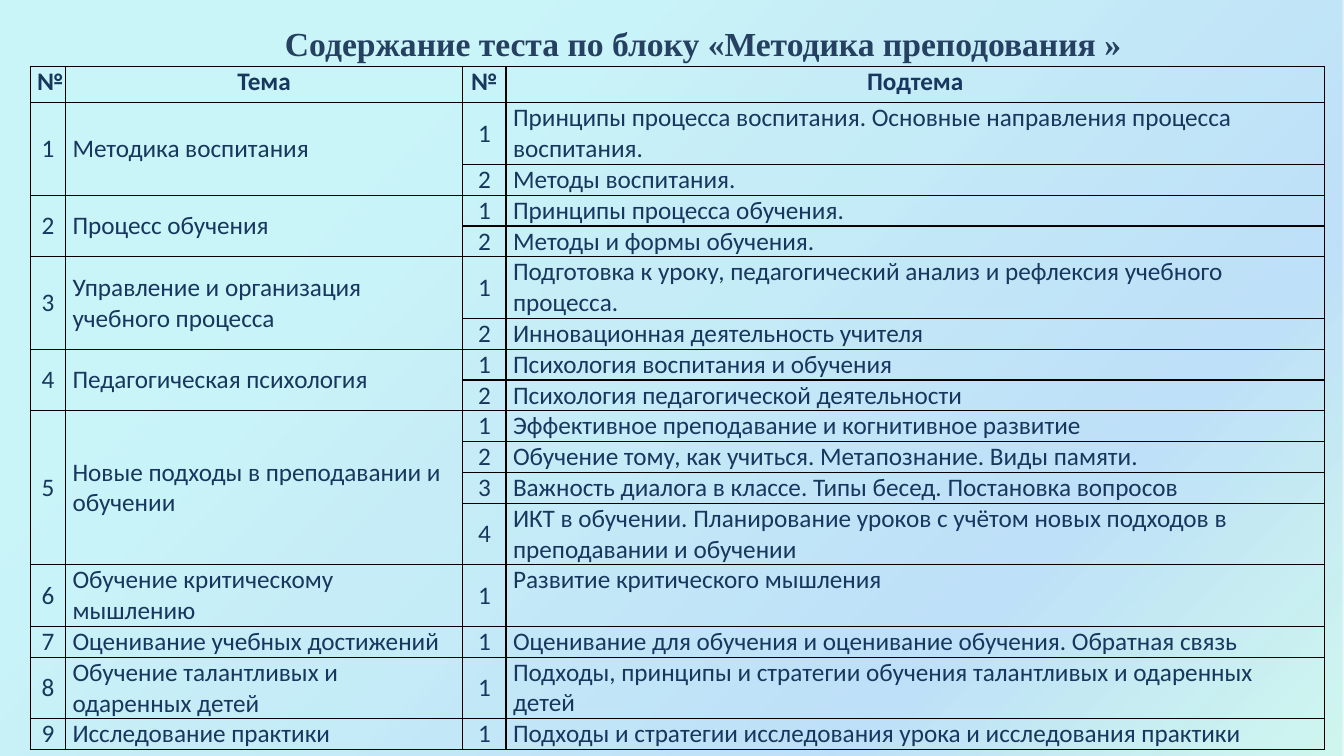
from dataclasses import dataclass

from pptx import Presentation
from pptx import oxml
from pptx.dml.color import RGBColor
from pptx.enum import shapes, text
from pptx.oxml import ns
from pptx.util import Pt


@dataclass(frozen=True)
class Theme:
    """Colours, fonts and sizes of the slide."""
    head: str = "254061"
    ink: str = "17375E"
    rule: str = "000000"
    wash: tuple = ((25, "21D6E0", 23), (75, "0087E6", 25),
                   (100, "03D4A8", 18), (100, "005CBF", 26))
    serif: str = "Times New Roman"
    sans: str = "Calibri"
    big: int = 24
    body: int = 18


LOOK = Theme()
TITLE = "Содержание теста по блоку «Методика преподования »"
HEADS = ("№", "Тема", "№", "Подтема")
TOPICS = (
    ("Методика воспитания", (
        "Принципы процесса воспитания. Основные направления процесса воспитания.",
        "Методы воспитания.")),
    ("Процесс обучения", (
        "Принципы процесса обучения.",
        "Методы и формы обучения.")),
    ("Управление и организация учебного процесса", (
        "Подготовка к уроку, педагогический анализ и рефлексия учебного процесса.",
        "Инновационная деятельность учителя")),
    ("Педагогическая психология", (
        "Психология воспитания и обучения",
        "Психология педагогической деятельности")),
    ("Новые подходы в преподавании и обучении", (
        "Эффективное преподавание и когнитивное развитие",
        "Обучение тому, как учиться. Метапознание. Виды памяти.",
        "Важность диалога в классе. Типы бесед. Постановка вопросов",
        "ИКТ в обучении. Планирование уроков с учётом новых подходов в преподавании и обучении")),
    ("Обучение критическому мышлению", ("Развитие критического мышления",)),
    ("Оценивание учебных достижений", (
        "Оценивание для обучения и оценивание обучения. Обратная связь",)),
    ("Обучение талантливых и одаренных детей", (
        "Подходы, принципы и стратегии обучения талантливых и одаренных детей",)),
    ("Исследование практики", (
        "Подходы и стратегии исследования урока и исследования практики",)),
)
COLS = (25.2, 283.7, 31, 584.6)
TALL = {1, 5, 12, 13, 15}
HEAD, LINE = 26, 22


def add_run(para, words, font, size, color, bold=False):
    """Add one styled run to a paragraph."""
    run = para.add_run()
    run.text = words
    run.font.name, run.font.size, run.font.bold = font, Pt(size), bold
    run.font.color.rgb = RGBColor.from_string(color)


def add_wash(slide, box):
    """Cover the box with a pale slanted gradient."""
    rect = slide.shapes.add_shape(shapes.MSO_SHAPE.RECTANGLE, *map(Pt, box))
    stops = "".join(
        f'<a:gs pos="{pos * 1000}"><a:srgbClr val="{color}">'
        f'<a:alpha val="{alpha * 1000}"/></a:srgbClr></a:gs>'
        for pos, color, alpha in LOOK.wash)
    rect._element.spPr.append(oxml.parse_xml(
        f'<a:gradFill {ns.nsdecls("a")}><a:gsLst>{stops}</a:gsLst>'
        '<a:lin ang="2700000" scaled="0"/></a:gradFill>'))
    rect.line.fill.background()
    rect.shadow.inherit = False


def add_title(slide, box):
    """Place the heading in the box."""
    frame = slide.shapes.add_textbox(*map(Pt, box)).text_frame
    frame.word_wrap = True
    frame.auto_size = text.MSO_AUTO_SIZE.SHAPE_TO_FIT_TEXT
    add_run(frame.paragraphs[0], TITLE, LOOK.serif, LOOK.big, LOOK.head, True)


def style_cell(cell):
    """Clear the fill, set the margins and rule all four sides."""
    cell.fill.background()
    cell.margin_left = cell.margin_right = Pt(5)
    cell.margin_top = cell.margin_bottom = 0
    props = cell._tc.get_or_add_tcPr()
    for spot, side in enumerate("LRTB"):
        props.insert(spot, oxml.parse_xml(
            f'<a:ln{side} {ns.nsdecls("a")} w="{Pt(1)}"><a:solidFill>'
            f'<a:srgbClr val="{LOOK.rule}"/></a:solidFill></a:ln{side}>'))


def fill_cell(cell, words, center=False, middle=False, bold=False):
    """Write the words in a cell."""
    para = cell.text_frame.paragraphs[0]
    para.alignment = text.PP_ALIGN.CENTER if center else text.PP_ALIGN.LEFT
    cell.vertical_anchor = text.MSO_ANCHOR.MIDDLE if middle else text.MSO_ANCHOR.TOP
    add_run(para, words, LOOK.sans, LOOK.body, LOOK.ink, bold)


def add_topics(slide, left, top):
    """Build the table of topics from its top left corner."""
    count = 1 + sum(len(subs) for _, subs in TOPICS)
    tall = [HEAD] + [LINE * (2 if row in TALL else 1) for row in range(1, count)]
    box = (left, top, sum(COLS), sum(tall))
    grid = slide.shapes.add_table(count, len(COLS), *map(Pt, box)).table
    grid.first_row = grid.horz_banding = False
    for col, width in zip(grid.columns, COLS):
        col.width = Pt(width)
    for row, height in zip(grid.rows, tall):
        row.height = Pt(height)
    for cell in grid.iter_cells():
        style_cell(cell)
    for col, words in enumerate(HEADS):
        fill_cell(grid.cell(0, col), words, center=True, bold=True)
    row = 1
    for num, (topic, subs) in enumerate(TOPICS, 1):
        last = row + len(subs) - 1
        if last > row:
            for col in (0, 1):
                grid.cell(row, col).merge(grid.cell(last, col))
        fill_cell(grid.cell(row, 0), str(num), center=True, middle=True)
        fill_cell(grid.cell(row, 1), topic, middle=True)
        for part, words in enumerate(subs, 1):
            fill_cell(grid.cell(row, 2), str(part), center=True, middle=True)
            fill_cell(grid.cell(row, 3), words)
            row += 1


def main():
    """Build and save the slide."""
    deck = Presentation()
    deck.slide_width, deck.slide_height = Pt(960), Pt(540)
    slide = deck.slides.add_slide(deck.slide_layouts[6])
    add_wash(slide, (0, 0, 960, 552))
    add_topics(slide, 21.6, 47.5)
    add_title(slide, (196.5, 13, 674.6, 36))
    deck.save("out.pptx")


if __name__ == "__main__":
    main()
